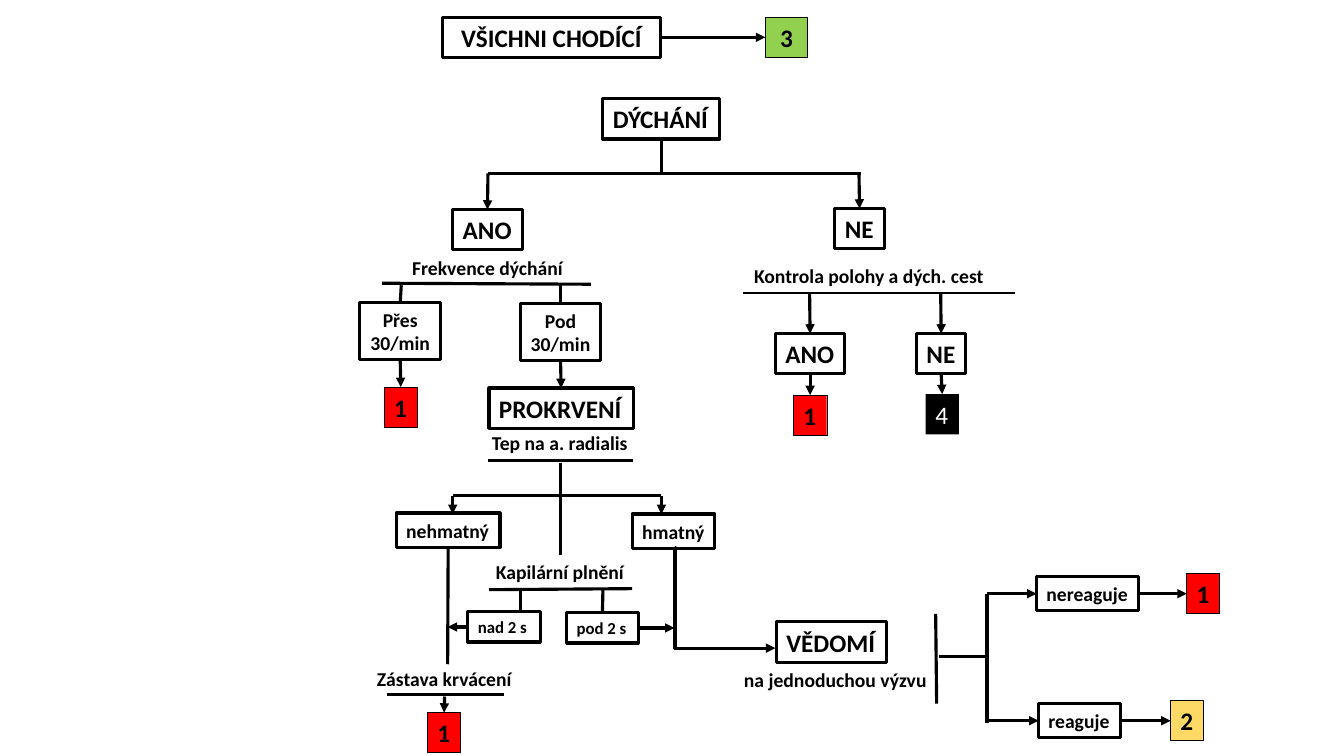
from lxml import etree
from pptx import Presentation
from pptx.dml.color import RGBColor
from pptx.enum.shapes import MSO_CONNECTOR, MSO_SHAPE
from pptx.enum.text import MSO_AUTO_SIZE, PP_ALIGN
from pptx.oxml.ns import qn
from pptx.util import Inches, Pt

BLACK = RGBColor(0x00, 0x00, 0x00)
WHITE = RGBColor(0xFF, 0xFF, 0xFF)
RED = RGBColor(0xFF, 0x00, 0x00)
GREEN = RGBColor(0x92, 0xD0, 0x50)
YELLOW = RGBColor(0xFF, 0xD9, 0x66)

RECTANGLE = MSO_SHAPE.RECTANGLE
STRAIGHT, ELBOW = MSO_CONNECTOR.STRAIGHT, MSO_CONNECTOR.ELBOW
FIT_SHAPE = MSO_AUTO_SIZE.SHAPE_TO_FIT_TEXT
LEFT, CENTER = PP_ALIGN.LEFT, PP_ALIGN.CENTER
TOP_SIDE, LEFT_SIDE, BOTTOM_SIDE, RIGHT_SIDE = range(4)

BLANK_LAYOUT = 6
LINE_HEIGHTS = {18: 0.4, 14: 0.34, 12: 0.3}
TWO_LINE_HEIGHT = 0.57


class FlowChart:
    font_name = "Calibri"
    stroke = 2.25

    def __init__(self, page):
        self.page = page

    def set_text(self, shape, text, size, color=BLACK, bold=True, wrap=False):
        frame = shape.text_frame
        frame.text = text
        frame.word_wrap = wrap
        frame.auto_size = FIT_SHAPE
        style = {"name": self.font_name, "size": Pt(size), "bold": bold}
        for para in frame.paragraphs:
            para.alignment = CENTER if wrap or len(frame.paragraphs) > 1 else LEFT
            for span in para.runs:
                for key, value in style.items():
                    setattr(span.font, key, value)
                span.font.color.rgb = color

    def box(self, text, left, top, width, size=18, fill=None, border=stroke, **style):
        height = TWO_LINE_HEIGHT if "\n" in text else LINE_HEIGHTS[size]
        shape = self.page.shapes.add_shape(
            RECTANGLE, Inches(left), Inches(top), Inches(width), Inches(height))
        shape.shadow.inherit = False
        if fill is None:
            shape.fill.background()
        else:
            shape.fill.solid()
            shape.fill.fore_color.rgb = fill
        if border:
            shape.line.color.rgb = BLACK
            shape.line.width = Pt(border)
        else:
            shape.line.fill.background()
        self.set_text(shape, text, size, **style)
        return shape

    def tag(self, text, left, top, fill=RED, width=0.33, border=0.75, **style):
        """Draw the filled square that holds a triage category."""
        return self.box(text, left, top, width, fill=fill, border=border, **style)

    def caption(self, text, left, top, width):
        label = self.page.shapes.add_textbox(
            Inches(left), Inches(top), Inches(width), Inches(LINE_HEIGHTS[14]))
        self.set_text(label, text, 14)

    def line(self, start, end, arrow=False, width=stroke, kind=STRAIGHT):
        """Draw a line; each end is an (x, y) point or a (box, side) pair."""
        ends = (start, end)
        points = [(0, 0) if hasattr(spot[0], "text_frame") else spot for spot in ends]
        connector = self.page.shapes.add_connector(
            kind, *[Inches(value) for point in points for value in point])
        for spot, join in zip(ends, (connector.begin_connect, connector.end_connect)):
            if hasattr(spot[0], "text_frame"):
                join(*spot)
        connector.line.color.rgb = BLACK
        connector.line.width = Pt(width)
        properties = connector._element.spPr
        if arrow:
            etree.SubElement(properties.find(qn("a:ln")), qn("a:tailEnd"), type="triangle")
        etree.SubElement(properties, qn("a:effectLst"))
        return connector

    def arrow(self, start, end):
        return self.line(start, end, arrow=True)

    def elbow(self, start, end, bend):
        """Draw an elbow arrow that turns at the given share of its width."""
        connector = self.line(start, end, arrow=True, kind=ELBOW)
        guides = connector._element.spPr.find(qn("a:prstGeom")).find(qn("a:avLst"))
        etree.SubElement(guides, qn("a:gd"), name="adj1", fmla=f"val {round(bend * 100000)}")


def draw_breathing(chart):
    walking = chart.box("VŠICHNI CHODÍCÍ", 4.39, 0.17, 2.16, wrap=True)
    green = chart.tag("3", 7.59, 0.17, GREEN, width=0.42, wrap=True)
    chart.arrow((walking, RIGHT_SIDE), (green, LEFT_SIDE))

    breathing = chart.box("DÝCHÁNÍ", 5.98, 0.98, 1.16)
    chart.line((breathing, BOTTOM_SIDE), (6.56, 1.72))
    chart.line((4.84, 1.72), (8.54, 1.72))
    for text, left, top, width, center in (
            ("NE", 8.28, 2.07, 0.49, 8.52), ("ANO", 4.49, 2.08, 0.69, 4.84)):
        answer = chart.box(text, left, top, width)
        chart.arrow((center, 1.72), (answer, TOP_SIDE))


def draw_airway(chart):
    chart.caption("Kontrola polohy a dých. cest", 7.38, 2.57, 2.49)
    chart.line((7.37, 2.91), (10.07, 2.91), width=1.5)
    yes = chart.box("ANO", 7.69, 3.31, 0.69)
    no = chart.box("NE", 9.09, 3.31, 0.49)
    red = chart.tag("1", 7.87, 3.92, border=0.25)
    black = chart.tag("4", 9.18, 3.91, BLACK, border=0, color=WHITE, bold=False)
    for answer, result, center in ((yes, red, 8.03), (no, black, 9.33)):
        chart.arrow((center, 2.91), (answer, TOP_SIDE))
        chart.arrow((answer, BOTTOM_SIDE), (result, TOP_SIDE))


def draw_rate(chart):
    chart.caption("Frekvence dýchání", 3.99, 2.49, 1.7)
    chart.line((3.79, 2.81), (5.86, 2.82))
    over = chart.box("Přes\n30/min", 3.57, 3, 0.8, 14)
    under = chart.box("Pod\n30/min", 5.16, 3.01, 0.8, 14)
    red = chart.tag("1", 3.81, 3.84)
    perfusion = chart.box("PROKRVENÍ", 4.85, 3.85, 1.43)
    for rate, result, center in ((over, red, 3.98), (under, perfusion, 5.56)):
        chart.line((center, 2.83), (rate, TOP_SIDE))
        chart.arrow((rate, BOTTOM_SIDE), (result, TOP_SIDE))


def draw_perfusion(chart):
    chart.caption("Tep na a. radialis", 4.78, 4.23, 1.56)
    chart.line((4.84, 4.57), (6.28, 4.57))
    chart.line((5.56, 4.59), (5.56, 5.51))
    chart.line((4.49, 4.92), (6.56, 4.92))
    for center in (4.49, 6.56):
        chart.arrow((center, 4.92), (center, 5.1))
    absent = chart.box("nehmatný", 3.93, 5.09, 1.03, 14)
    chart.box("hmatný", 6.27, 5.1, 0.82, 14)

    chart.caption("Kapilární plnění", 4.82, 5.51, 1.48)
    chart.line((4.85, 5.85), (6.27, 5.84))
    slow = chart.box("nad 2 s", 4.64, 6.07, 0.72, 12)
    fast = chart.box("pod 2 s", 5.62, 6.08, 0.71, 12)
    chart.line((5.16, 5.85), (5.16, 6.07))
    chart.line((5.98, 5.85), (fast, TOP_SIDE))
    chart.arrow((slow, LEFT_SIDE), (4.44, 6.22))
    chart.arrow((fast, RIGHT_SIDE), (6.69, 6.23))

    chart.line((absent, BOTTOM_SIDE), (4.44, 6.59))
    chart.caption("Zástava krvácení", 3.64, 6.57, 1.55)
    chart.line((3.84, 6.89), (5, 6.89))
    red = chart.tag("1", 4.24, 7.07)
    chart.arrow((4.41, 6.91), (red, TOP_SIDE))


def draw_consciousness(chart):
    chart.elbow((6.69, 5.43), (7.69, 6.43), bend=0.005)
    chart.box("VĚDOMÍ", 7.7, 6.17, 1.09)
    chart.caption("na jednoduchou výzvu", 7.28, 6.58, 2.03)
    chart.line((9.29, 6.98), (9.28, 6.09))
    chart.line((9.31, 6.51), (9.78, 6.51))
    chart.line((9.79, 7.17), (9.79, 5.89))
    for text, left, width, center, category, fill, tag_left in (
            ("nereaguje", 10.28, 1.01, 5.89, "1", RED, 11.77),
            ("reaguje", 10.3, 0.81, 7.15, "2", YELLOW, 11.61)):
        response = chart.box(text, left, center - LINE_HEIGHTS[14] / 2, width, 14)
        result = chart.tag(category, tag_left, center - LINE_HEIGHTS[18] / 2, fill)
        chart.arrow((9.79, center), (response, LEFT_SIDE))
        chart.arrow((response, RIGHT_SIDE), (result, LEFT_SIDE))


def main():
    deck = Presentation()
    deck.slide_width, deck.slide_height = Inches(13.33), Inches(7.5)
    chart = FlowChart(deck.slides.add_slide(deck.slide_layouts[BLANK_LAYOUT]))
    for draw in (draw_breathing, draw_airway, draw_rate, draw_perfusion, draw_consciousness):
        draw(chart)
    deck.save("out.pptx")


if __name__ == "__main__":
    main()
